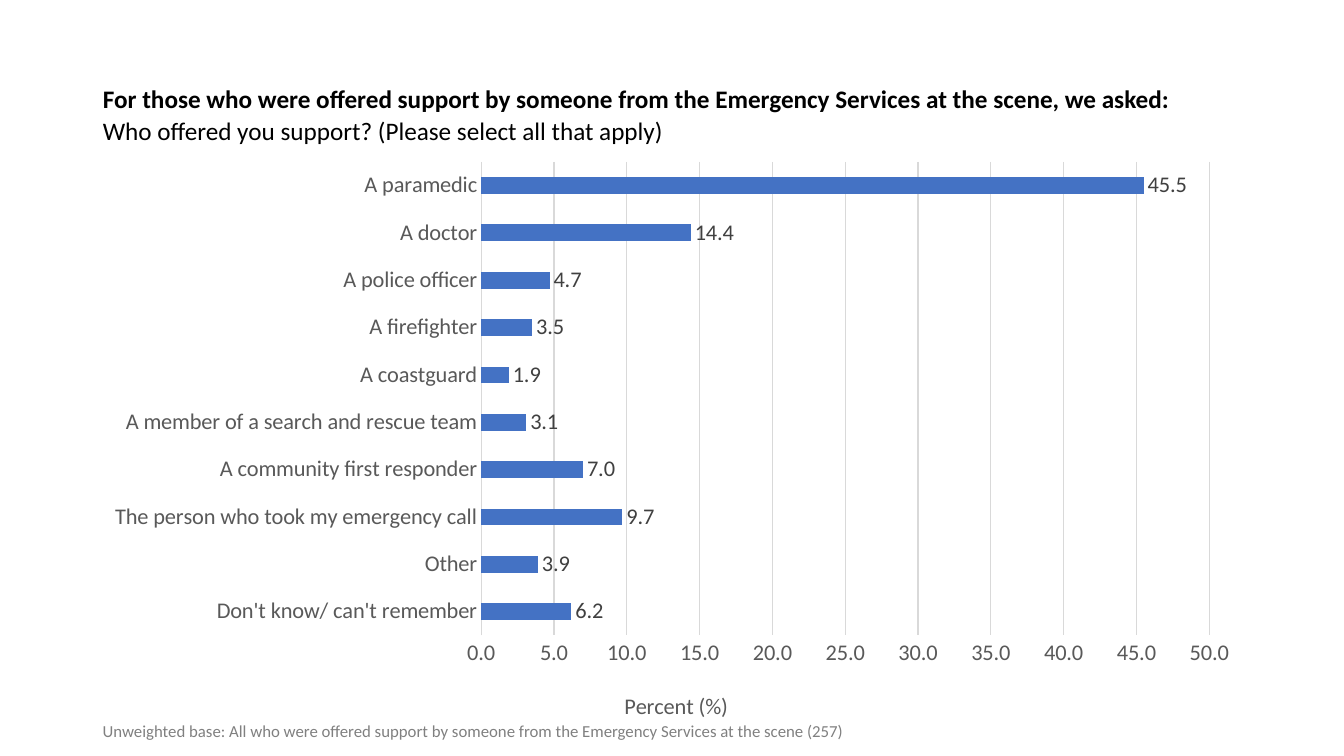
from dataclasses import dataclass

from lxml.etree import SubElement
from pptx import Presentation
from pptx.chart.data import CategoryChartData
from pptx.dml.color import RGBColor
from pptx.enum.chart import XL_CHART_TYPE, XL_LABEL_POSITION, XL_TICK_MARK
from pptx.enum.text import MSO_ANCHOR, MSO_AUTO_SIZE, PP_ALIGN
from pptx.oxml.ns import qn
from pptx.util import Inches, Pt


@dataclass(frozen=True)
class Theme:
    font: str = "Calibri"
    title_color: str = "000000"
    axis_color: str = "595959"
    label_color: str = "404040"
    note_color: str = "808080"
    grid_color: str = "D9D9D9"
    bar_color: str = "4472C4"
    title_size: int = 18
    chart_size: int = 16
    note_size: int = 12


SUPPORT_OFFERED = {
    "A paramedic": 45.5,
    "A doctor": 14.4,
    "A police officer": 4.7,
    "A firefighter": 3.5,
    "A coastguard": 1.9,
    "A member of a search and rescue team": 3.1,
    "A community first responder": 7.0,
    "The person who took my emergency call": 9.7,
    "Other": 3.9,
    "Don't know/ can't remember": 6.2,
}


def set_layout(parent, index, **fractions):
    """Fix the place of a chart part, as fractions of the chart area."""
    for old_layout in parent.findall(qn("c:layout")):
        parent.remove(old_layout)
    layout = SubElement(parent, qn("c:layout"))
    parent.insert(index, layout)
    manual = SubElement(layout, qn("c:manualLayout"))
    if "w" in fractions:
        SubElement(manual, qn("c:layoutTarget")).set("val", "inner")
    for side in ("x", "y"):
        SubElement(manual, qn(f"c:{side}Mode")).set("val", "edge")
    for name, value in fractions.items():
        SubElement(manual, qn(f"c:{name}")).set("val", str(value))


class SlideBuilder:
    def __init__(self, slide, theme):
        self.slide = slide
        self.theme = theme

    def style_font(self, font, size, color, bold=False):
        font.name = self.theme.font
        font.size = Pt(size)
        font.bold = bold
        font.color.rgb = RGBColor.from_string(color)

    def style_line(self, line):
        line.width = Pt(0.75)
        line.color.rgb = RGBColor.from_string(self.theme.grid_color)

    def add_span(self, para, text, size, color, bold=False):
        span = para.add_run()
        span.text = text
        self.style_font(span.font, size, color, bold)

    def add_title(self, lead, question, left, top, width, height):
        title = self.slide.shapes.title
        title.left, title.top = Inches(left), Inches(top)
        title.width, title.height = Inches(width), Inches(height)
        frame = title.text_frame
        frame.word_wrap = True
        frame.auto_size = MSO_AUTO_SIZE.NONE
        frame.vertical_anchor = MSO_ANCHOR.MIDDLE
        para = frame.paragraphs[0]
        para.alignment = PP_ALIGN.LEFT
        para.line_spacing = 1.07
        para.space_before, para.space_after = Pt(0), Pt(8)
        size, color = self.theme.title_size, self.theme.title_color
        self.add_span(para, lead, size, color, bold=True)
        para.add_line_break()
        self.add_span(para, question, size, color)

    def add_note(self, text, left, top, width, height):
        box = self.slide.shapes.add_textbox(
            Inches(left), Inches(top), Inches(width), Inches(height))
        frame = box.text_frame
        frame.word_wrap = True
        frame.auto_size = MSO_AUTO_SIZE.SHAPE_TO_FIT_TEXT
        self.add_span(frame.paragraphs[0], text,
                      self.theme.note_size, self.theme.note_color)

    def add_bar_chart(self, values, axis_title, left, top, width, height):
        """Draw horizontal bars, with the first entry of values at the top."""
        theme = self.theme
        data = CategoryChartData(number_format="0.0")
        data.categories = list(reversed(values))
        data.add_series("Series 1", list(reversed(values.values())))
        chart = self.slide.shapes.add_chart(
            XL_CHART_TYPE.BAR_CLUSTERED, Inches(left), Inches(top),
            Inches(width), Inches(height), data).chart
        chart.has_legend = False
        chart.has_title = False
        self.style_font(chart.font, theme.chart_size, theme.title_color)
        set_layout(chart.element.find(".//" + qn("c:plotArea")), 0,
                   x=0.335, y=0.02, w=0.628, h=0.807)
        self.style_bars(chart.plots[0])
        self.style_axes(chart, axis_title)

    def style_bars(self, plot):
        plot.gap_width = 182
        plot.vary_by_categories = False
        fill = plot.series[0].format.fill
        fill.solid()
        fill.fore_color.rgb = RGBColor.from_string(self.theme.bar_color)
        plot.has_data_labels = True
        labels = plot.data_labels
        labels.show_value = True
        labels.number_format = "0.0"
        labels.number_format_is_linked = False
        labels.position = XL_LABEL_POSITION.OUTSIDE_END
        self.style_font(labels.font, self.theme.chart_size, self.theme.label_color)

    def style_axes(self, chart, title_text):
        size, color = self.theme.chart_size, self.theme.axis_color
        for axis in (chart.category_axis, chart.value_axis):
            axis.major_tick_mark = XL_TICK_MARK.NONE
            axis.minor_tick_mark = XL_TICK_MARK.NONE
            self.style_font(axis.tick_labels.font, size, color)
        chart.category_axis.has_major_gridlines = False
        self.style_line(chart.category_axis.format.line)

        percent = chart.value_axis
        percent.minimum_scale, percent.maximum_scale = 0, 50
        percent.major_unit = 5
        percent.has_major_gridlines = True
        self.style_line(percent.major_gridlines.format.line)
        percent.format.line.fill.background()
        percent.tick_labels.number_format = "0.0"
        percent.tick_labels.number_format_is_linked = False
        para = percent.axis_title.text_frame.paragraphs[0]
        self.style_font(para.font, size, color)
        self.add_span(para, title_text, size, color)
        set_layout(percent.axis_title.element, 1, x=0.455, y=0.915)


def main():
    deck = Presentation()
    deck.slide_width, deck.slide_height = Inches(13.33), Inches(7.5)
    title_only = deck.slide_layouts.get_by_name("Title Only")
    page = SlideBuilder(deck.slides.add_slide(title_only), Theme())
    left, width = 0.92, 11.5
    page.add_title(
        "For those who were offered support by someone from the "
        "Emergency Services at the scene, we asked:",
        "Who offered you support? (Please select all that apply)",
        left, 0.4, width, 1.45)
    page.add_bar_chart(SUPPORT_OFFERED, "Percent (%)", left, 1.49, width, 5.82)
    page.add_note(
        "Unweighted base: All who were offered support by someone from the "
        "Emergency Services at the scene (257)",
        left, 7.1, 12.03, 0.3)
    deck.save("out.pptx")


if __name__ == "__main__":
    main()
